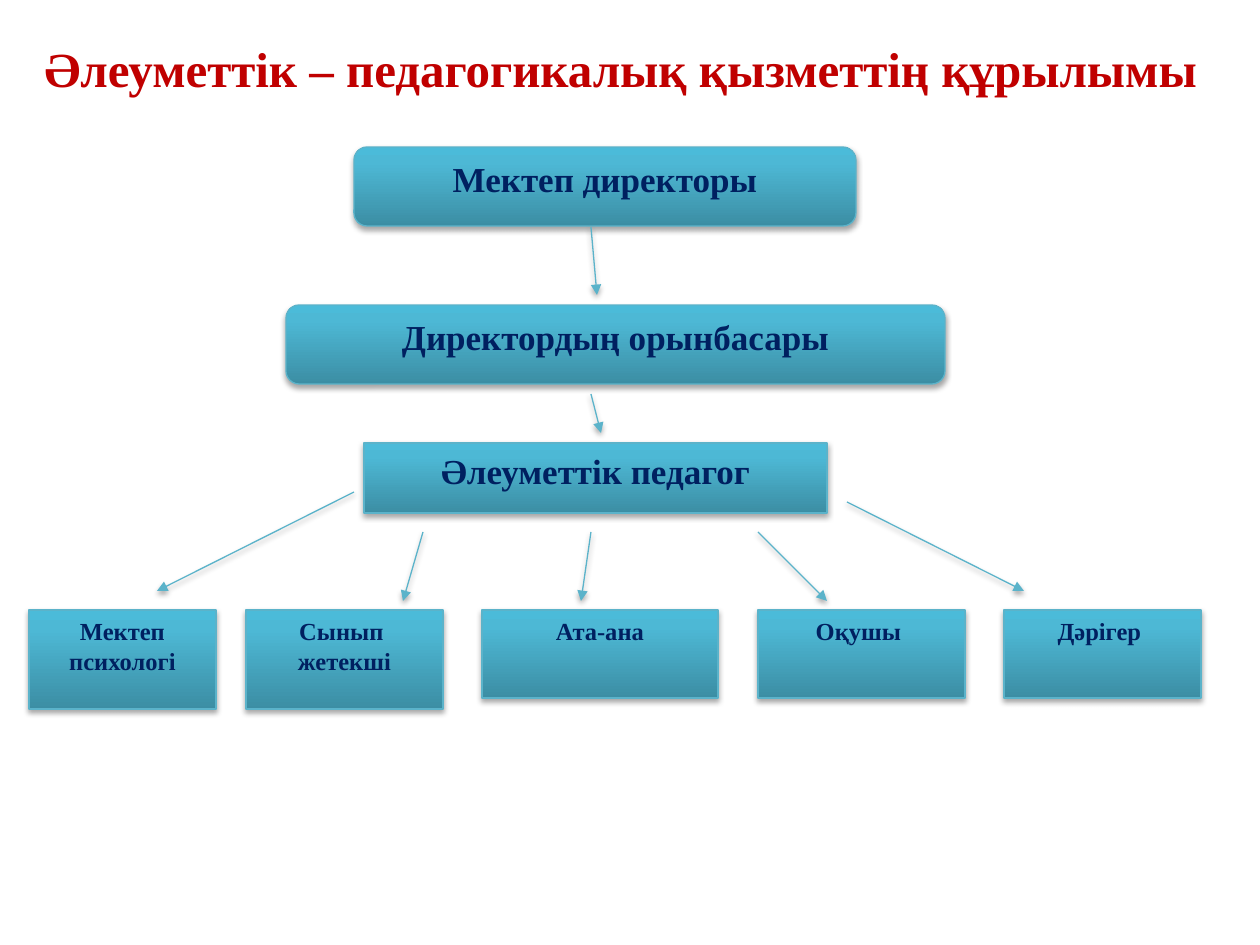
from pptx import Presentation
from pptx.dml.color import RGBColor
from pptx.enum.shapes import MSO_CONNECTOR, MSO_SHAPE
from pptx.enum.text import MSO_ANCHOR, PP_ALIGN
from pptx.oxml import parse_xml
from pptx.oxml.ns import nsdecls, qn
from pptx.util import Pt
from copy import deepcopy

RECT = MSO_SHAPE.RECTANGLE
ROUND = MSO_SHAPE.ROUNDED_RECTANGLE
STRAIGHT = MSO_CONNECTOR.STRAIGHT
CENTER = PP_ALIGN.CENTER
TOP, MIDDLE = MSO_ANCHOR.TOP, MSO_ANCHOR.MIDDLE

FONT = "Times New Roman"
COLORS = {
    "title": "C00000",
    "text": "002060",
    "line": "5BB3CA",
    "low": "3C8EA4",
    "mid": "4DB8D5",
    "high": "4BBBD9",
    "shadow": "000000",
}
STOPS = [(0, "low"), (0.8, "mid"), (1, "high")]

CHAIN = [
    (ROUND, 354, 147, 502, 79, "Мектеп директоры"),
    (ROUND, 286, 305, 659, 79, "Директордың орынбасары"),
    (RECT, 364, 443, 463, 70, "Әлеуметтік педагог"),
]
ROW_TOP = 610
ROW = [
    (29, 187, 99, "Мектеп психологі"),
    (246, 197, 99, "Сынып \nжетекші"),
    (482, 236, 88, "Ата-ана"),
    (758, 207, 88, "Оқушы "),
    (1004, 197, 88, "Дәрігер "),
]
ARROWS = [
    (591, 227, 597, 295),
    (591, 394, 601, 433),
    (354, 492, 157, 591),
    (423, 532, 403, 601),
    (591, 532, 581, 601),
    (758, 532, 827, 601),
    (847, 502, 1024, 591),
]


def px(*nums):
    return [round(num * 914400 / 126) for num in nums]


def rgb(name):
    return RGBColor.from_string(COLORS[name])


def set_line(item):
    item.line.color.rgb = rgb("line")
    item.line.width = Pt(0.75)


def add_shadow(item):
    props = item._element.spPr
    for old in props.findall(qn("a:effectLst")):
        props.remove(old)
    props.append(parse_xml(
        f'<a:effectLst {nsdecls("a")}>'
        '<a:outerShdw blurRad="40000" dist="23000" dir="5400000" rotWithShape="0">'
        f'<a:srgbClr val="{COLORS["shadow"]}"><a:alpha val="35000"/></a:srgbClr>'
        '</a:outerShdw></a:effectLst>'))


def set_fill(shape):
    fill = shape.fill
    fill.gradient()
    fill.gradient_angle = 90
    first = shape._element.spPr.find(".//" + qn("a:gs"))
    first.addnext(deepcopy(first))
    for stop, (place, name) in zip(fill.gradient_stops, STOPS):
        stop.position = place
        stop.color.rgb = rgb(name)


def set_text(shape, text, size, color, anchor):
    frame = shape.text_frame
    frame.text = text
    frame.word_wrap = True
    frame.vertical_anchor = anchor
    for para in frame.paragraphs:
        para.alignment = CENTER
        for run in para.runs:
            run.font.name = FONT
            run.font.size = Pt(size)
            run.font.bold = True
            run.font.color.rgb = rgb(color)


def add_box(slide, kind, left, top, width, height, text, size):
    box = slide.shapes.add_shape(kind, *px(left, top, width, height))
    set_fill(box)
    set_line(box)
    add_shadow(box)
    set_text(box, text, size, "text", TOP)


def add_arrow(slide, *ends):
    arrow = slide.shapes.add_connector(STRAIGHT, *px(*ends))
    set_line(arrow)
    arrow.line._get_or_add_ln().append(
        parse_xml(f'<a:tailEnd {nsdecls("a")} type="triangle"/>'))
    add_shadow(arrow)


def add_title(slide, text):
    title = slide.shapes.add_textbox(*px(20, 3, 1201, 165))
    set_text(title, text, 28, "title", MIDDLE)
    title.text_frame.margin_bottom = px(42)[0]


def main():
    deck = Presentation()
    deck.slide_width, deck.slide_height = px(1260, 945)
    slide = deck.slides.add_slide(deck.slide_layouts[6])
    for kind, left, top, width, height, text in CHAIN:
        add_box(slide, kind, left, top, width, height, text, 20)
    for left, width, height, text in ROW:
        add_box(slide, RECT, left, ROW_TOP, width, height, text, 14)
    for ends in ARROWS:
        add_arrow(slide, *ends)
    add_title(slide, "Әлеуметтік – педагогикалық қызметтің құрылымы")
    deck.save("out.pptx")


if __name__ == "__main__":
    main()
